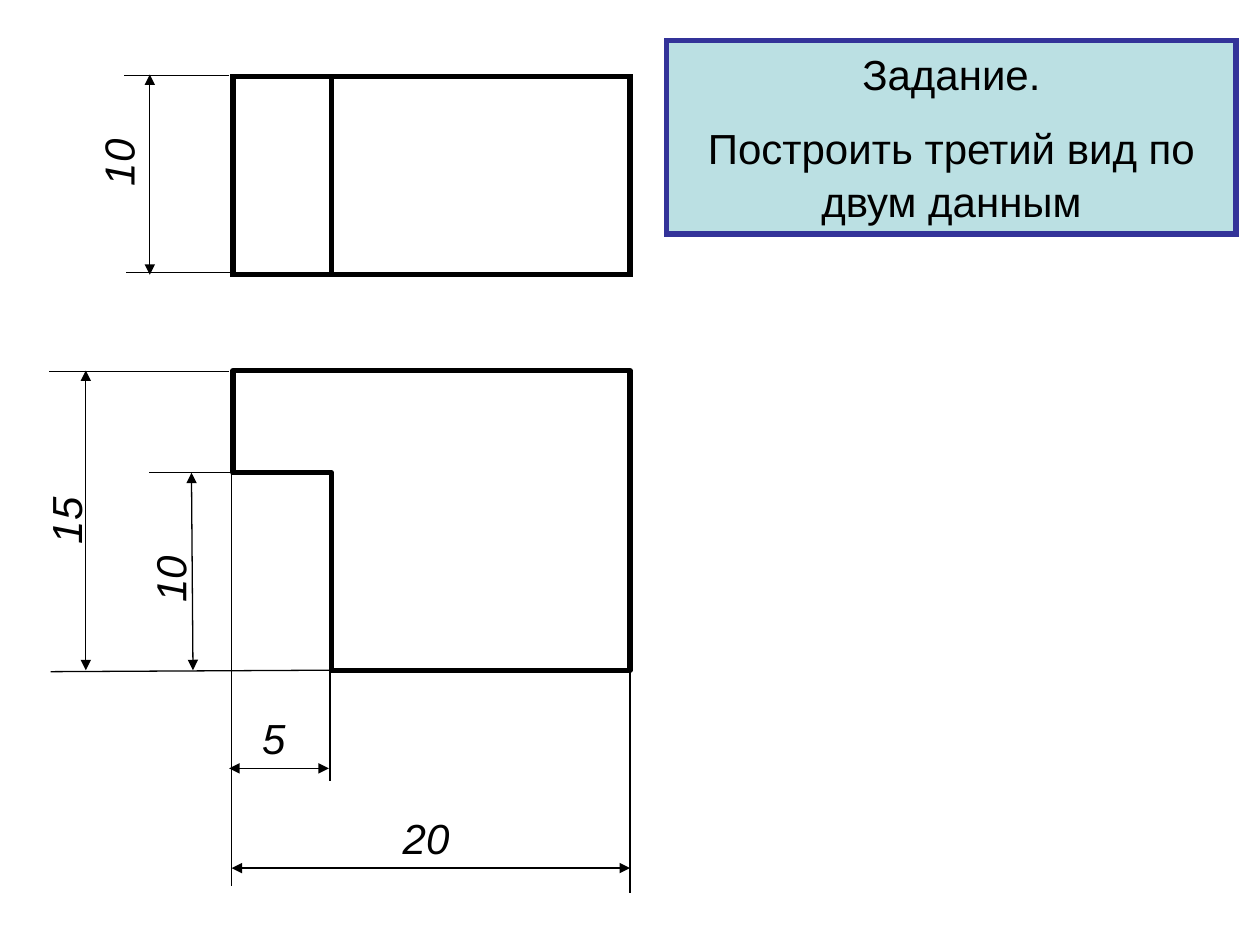
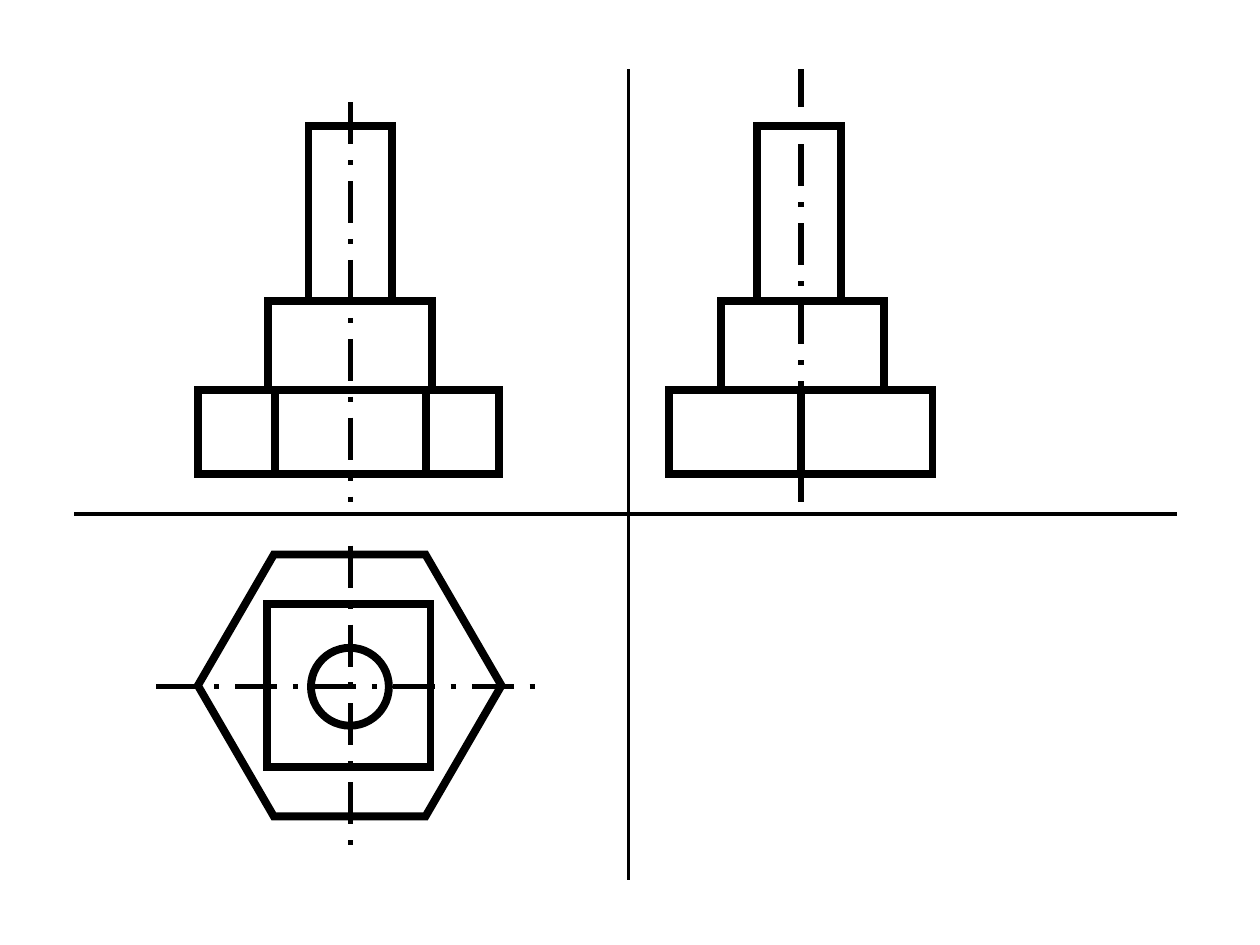
from dataclasses import dataclass

from lxml import etree
from pptx import Presentation
from pptx.dml.color import RGBColor
from pptx.enum.dml import MSO_LINE
from pptx.enum.shapes import MSO_CONNECTOR, MSO_SHAPE
from pptx.enum.text import MSO_ANCHOR, PP_ALIGN
from pptx.oxml.ns import qn
from pptx.util import Cm, Pt


@dataclass(frozen=True)
class Theme:
    ink: RGBColor = RGBColor(0x00, 0x00, 0x00)
    panel: RGBColor = RGBColor(0xBB, 0xE0, 0xE3)
    frame: RGBColor = RGBColor(0x33, 0x33, 0x99)
    font: str = "Arial"
    text: float = 24
    thin: float = 0.75
    quadrant: float = 2.25
    edge: float = 3
    bold_edge: float = 4.5


class Drawing:
    """Holds the style and the current slide."""

    def __init__(self, prs, theme):
        self.prs, self.theme, self.s = prs, theme, None

    def new_slide(self):
        self.s = self.prs.slides.add_slide(self.prs.slide_layouts[6])

    def _stroke(self, sp, width, color=None, dash=None):
        sp.line.color.rgb = color or self.theme.ink
        formats = {"width": Pt(width), "dash_style": dash}
        for name, value in formats.items():
            setattr(sp.line, name, value)
        return sp.line._get_or_add_ln()

    def _write(self, tf, lines, before=0, spacing=None, italic=False):
        th = self.theme
        for i, text in enumerate(lines):
            p = tf.paragraphs[0] if i == 0 else tf.add_paragraph()
            p.alignment = PP_ALIGN.CENTER
            p.line_spacing = spacing
            if i:
                p.space_before = Pt(before)
            r = p.add_run()
            r.text = text
            r.font.color.rgb = th.ink
            formats = {"name": th.font, "size": Pt(th.text), "italic": italic}
            for name, value in formats.items():
                setattr(r.font, name, value)

    def shape(self, kind, x, y, w, h, width, color=None):
        sp = self.s.shapes.add_shape(kind, Cm(x), Cm(y), Cm(w), Cm(h))
        sp.shadow.inherit = False
        sp.fill.background()
        ln = self._stroke(sp, width, color)
        etree.SubElement(ln, qn("a:miter"), lim="800000")
        return sp

    def rect(self, x, y, w, h, width, color=None):
        return self.shape(MSO_SHAPE.RECTANGLE, x, y, w, h, width, color)

    def outline(self, points, width):
        start, *rest = [(Cm(x), Cm(y)) for x, y in points]
        builder = self.s.shapes.build_freeform(*start)
        builder.add_line_segments(rest, close=True)
        sp = builder.convert_to_shape()
        sp.shadow.inherit = False
        sp.fill.background()
        etree.SubElement(self._stroke(sp, width), qn("a:round"))

    def line(self, x1, y1, x2, y2, width, dash=None, arrows=False):
        c = self.s.shapes.add_connector(
            MSO_CONNECTOR.STRAIGHT, Cm(x1), Cm(y1), Cm(x2), Cm(y2))
        ln = self._stroke(c, width, dash=dash)
        if arrows:
            for end in ("a:headEnd", "a:tailEnd"):
                etree.SubElement(ln, qn(end), type="triangle")
        etree.SubElement(c._element.spPr, qn("a:effectLst"))

    def axis(self, *ends):
        self.line(*ends, self.theme.edge, MSO_LINE.LONG_DASH_DOT)

    def dimension(self, ends, label, cx, cy, upright=False):
        """Arrowed line with its number centred at (cx, cy)."""
        self.line(*ends, self.theme.thin, arrows=True)
        w = h = 0.98
        tb = self.s.shapes.add_textbox(
            Cm(cx - w / 2), Cm(cy - h / 2), Cm(w), Cm(h))
        tb.rotation = 270 if upright else 0
        tf = tb.text_frame
        for side in ("left", "top", "right", "bottom"):
            setattr(tf, f"margin_{side}", Cm(0))
        tf.word_wrap = False
        self._write(tf, [label], italic=True)

    def panel(self, x, y, w, h, lines):
        sp = self.rect(x, y, w, h, self.theme.edge, self.theme.frame)
        sp.fill.solid()
        sp.fill.fore_color.rgb = self.theme.panel
        tf = sp.text_frame
        tf.word_wrap = True
        tf.vertical_anchor = MSO_ANCHOR.TOP
        self._write(tf, lines, before=12, spacing=1.05)


def task_slide(d):
    th = d.theme
    d.new_slide()
    left, step, right = 4.7, 6.68, 12.7
    top, notch, bottom = 7.47, 9.53, 13.51

    # Upper view and stepped lower view
    d.rect(left, 1.55, right - left, 3.99, th.edge)
    d.line(step, 1.57, step, 5.54, th.edge)
    d.outline([(left, top), (right, top), (right, bottom), (step, bottom),
               (step, notch), (left, notch)], th.edge)

    # Extension lines
    for ends in [(step, bottom, 1.02, 13.54), (4.65, notch, 3, notch),
                 (4.62, 7.49, 0.99, 7.49), (right, bottom, right, 18.01),
                 (4.67, notch, 4.67, 17.86), (6.65, bottom, 6.65, 15.75),
                 (4.67, 5.49, 2.54, 5.49), (4.62, 1.52, 2.49, 1.52)]:
        d.line(*ends, th.thin)

    # Dimensions
    d.dimension((3.02, 1.5, 3.02, 5.54), "10", 2.36, 3.28, upright=True)
    d.dimension((1.73, top, 1.73, bottom), "15", 1.3, 10.5, upright=True)
    d.dimension((3.86, notch, 3.89, bottom), "10", 3.4, 11.67, upright=True)
    d.dimension((4.67, 17.5, right, 17.5), "20", 8.59, 16.87)
    d.dimension((4.62, 15.49, 6.63, 15.49), "5", 5.52, 14.86)

    # Task text
    d.panel(13.44, 0.81, 11.48, 3.91,
            ["Задание.", "Построить третий вид по двум данным"])


def bolt_slide(d):
    th = d.theme
    d.new_slide()
    front_axis, side_axis = 7.06, 16.15
    rod_y, collar_y, head_y, head_h = 2.54, 6.07, 7.87, 1.68

    # Front and side views: rod, collar, head, head edges
    views = [(6.22, 5.41, 3.99, 6.07, (5.54, 8.59)),
             (15.27, 14.53, 13.49, 5.31, (side_axis,))]
    for rod_x, collar_x, head_x, head_w, edges in views:
        d.rect(rod_x, rod_y, 1.68, collar_y - rod_y, th.bold_edge)
        d.rect(collar_x, collar_y, 3.3, head_y - collar_y, th.bold_edge)
        d.rect(head_x, head_y, head_w, head_h, th.bold_edge)
        for x in edges:
            d.line(x, head_y, x, head_y + head_h, th.bold_edge)

    # Top view
    hexagon = d.shape(MSO_SHAPE.HEXAGON, 3.99, 11.18, 6.12, 5.28, th.bold_edge)
    hexagon.adjustments[0] = 0.29
    d.rect(5.38, 12.17, 3.3, 3.3, th.bold_edge)
    d.shape(MSO_SHAPE.OVAL, 6.27, 13.06, 1.57, 1.57, th.bold_edge)

    # Centre lines
    d.axis(3.15, 13.84, 10.92, 13.84)
    d.axis(front_axis, 11, front_axis, 17.22)
    d.axis(front_axis, 2.06, front_axis, 10.11)
    d.axis(side_axis, 10.11, side_axis, 1.4)

    # Projection axes
    d.line(1.5, 10.36, 23.72, 10.36, th.quadrant)
    d.line(12.67, 1.4, 12.67, 17.73, th.quadrant)


def main():
    prs = Presentation()
    prs.slide_width, prs.slide_height = Cm(25.4), Cm(19.05)
    d = Drawing(prs, Theme())
    task_slide(d)
    bolt_slide(d)
    prs.save("out.pptx")


if __name__ == "__main__":
    main()
